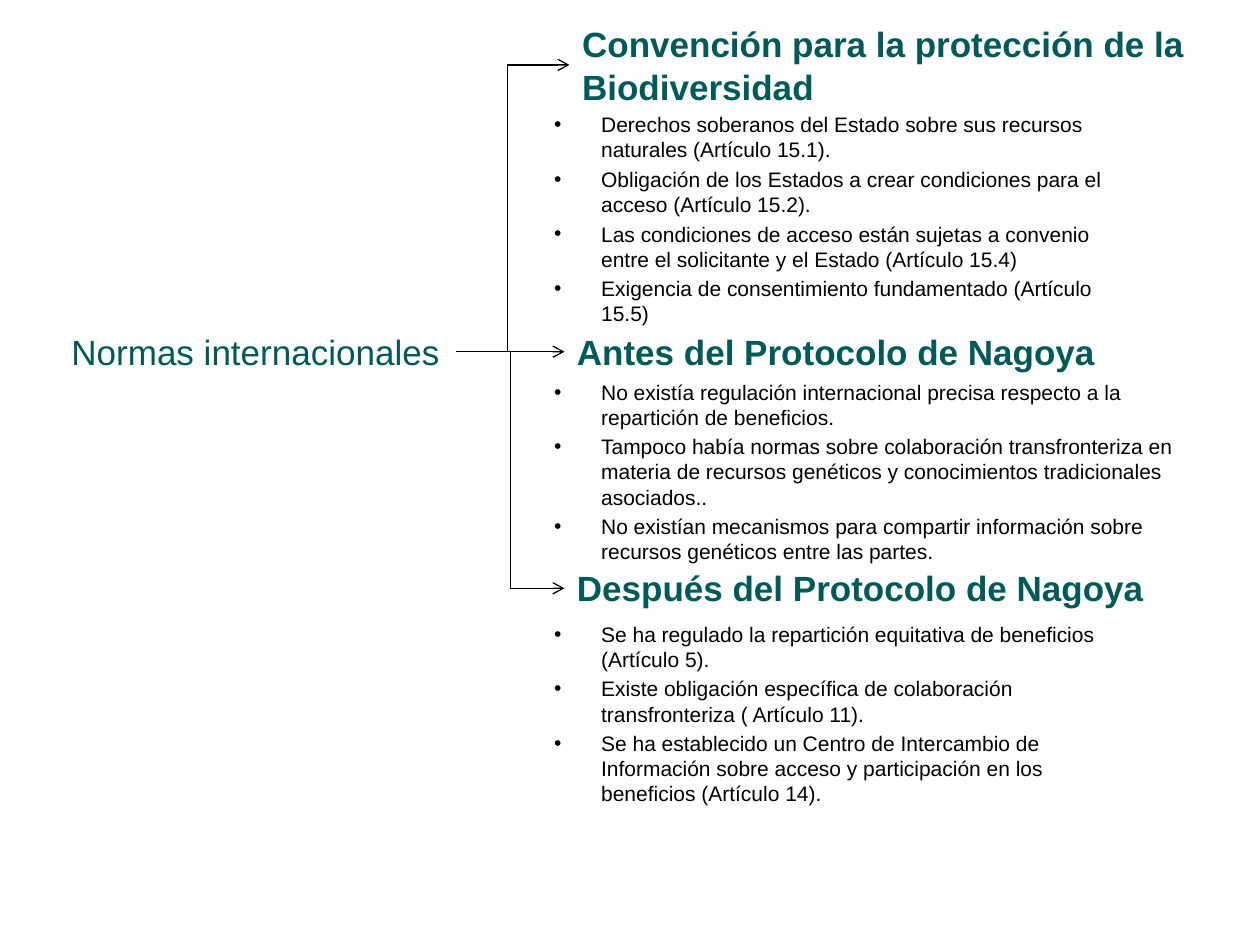
from lxml.etree import SubElement
from pptx import Presentation
from pptx.dml.color import RGBColor
from pptx.enum.shapes import MSO_CONNECTOR
from pptx.enum.text import MSO_ANCHOR, MSO_AUTO_SIZE, PP_ALIGN
from pptx.oxml.ns import qn
from pptx.util import Cm, Pt

GREEN, BLACK = "005A58", "000000"

# Content: boxes are left, top, width, height in centimetres
ROOT = ("Normas internacionales", (1.19, 6.53, 8.0, 1.12))
BRANCHES = [
    {
        "heading": "Convención para la protección de la Biodiversidad",
        "heading_box": (11.48, 0.33, 13.06, 1.96),
        "list_box": (10.92, 2.13, 12.29, 2.31),
        "bend": 0.457,
        "items": [
            "Derechos soberanos del Estado sobre sus recursos naturales (Artículo 15.1).",
            "Obligación de los Estados a crear condiciones para el acceso (Artículo 15.2).",
            "Las condiciones de acceso están sujetas a convenio entre el solicitante y el Estado (Artículo 15.4)",
            "Exigencia de consentimiento fundamentado (Artículo 15.5)",
        ],
    },
    {
        "heading": "Antes del Protocolo de Nagoya",
        "heading_box": (11.38, 6.53, 11.05, 1.12),
        "list_box": (10.92, 7.52, 13.49, 2.69),
        "items": [
            "No existía regulación internacional precisa respecto a la repartición de beneficios.",
            "Tampoco había normas sobre colaboración transfronteriza en materia de recursos "
            "genéticos y conocimientos tradicionales asociados..",
            "No existían mecanismos para compartir información sobre recursos genéticos entre las partes.",
        ],
    },
    {
        "heading": "Después del Protocolo de Nagoya",
        "heading_box": (11.38, 11.3, 12.04, 1.12),
        "list_box": (10.92, 12.4, 12.22, 2.69),
        "bend": 0.5,
        "items": [
            "Se ha regulado la repartición equitativa de beneficios (Artículo 5).",
            "Existe obligación específica de colaboración transfronteriza ( Artículo 11).",
            "Se ha establecido un Centro de Intercambio de Información sobre acceso y "
            "participación en los beneficios (Artículo 14).",
        ],
    },
]


def color(hex_value):
    return RGBColor.from_string(hex_value)


def lengths(values):
    return [Cm(value) for value in values]


def format_font(paragraph, size, hex_value, bold=False):
    paragraph.alignment = PP_ALIGN.LEFT
    font = paragraph.font
    font.name, font.size, font.bold = "Arial", Pt(size), bold
    font.color.rgb = color(hex_value)


def fill_heading(shape, text, bold=True, wrap=False, anchor=MSO_ANCHOR.TOP):
    frame = shape.text_frame
    frame.text = text
    frame.word_wrap = wrap
    frame.auto_size = MSO_AUTO_SIZE.SHAPE_TO_FIT_TEXT
    frame.vertical_anchor = anchor
    format_font(frame.paragraphs[0], 20, GREEN, bold)


def add_bullets(slide, box, items):
    frame = slide.shapes.add_textbox(*lengths(box)).text_frame
    frame.word_wrap = True
    for index, item in enumerate(items):
        paragraph = frame.add_paragraph() if index else frame.paragraphs[0]
        paragraph.text = item
        if index:
            paragraph.space_before = Pt(2.4)
        properties = paragraph._p.get_or_add_pPr()
        properties.set("marL", str(Cm(0.95)))
        properties.set("indent", str(-Cm(0.95)))
        SubElement(properties, qn("a:buFont"), typeface="Arial")
        SubElement(properties, qn("a:buChar"), char="•")
        format_font(paragraph, 12, BLACK)


def add_arrow(slide, start, end, bend=None):
    kind = MSO_CONNECTOR.ELBOW if bend else MSO_CONNECTOR.STRAIGHT
    connector = slide.shapes.add_connector(kind, *lengths(start + end))
    connector.line.color.rgb = color(BLACK)
    connector.line.width = Pt(0.75)
    SubElement(connector.line._get_or_add_ln(), qn("a:tailEnd"), type="arrow")
    properties = connector._element.spPr
    SubElement(properties, qn("a:effectLst"))
    if bend:
        adjustments = properties.find(qn("a:prstGeom")).get_or_add_avLst()
        SubElement(adjustments, qn("a:gd"), name="adj1", fmla=f"val {round(bend * 100000)}")


def main():
    presentation = Presentation()
    presentation.slide_width, presentation.slide_height = Cm(25.4), Cm(19.05)
    slide = presentation.slides.add_slide(presentation.slide_layouts[5])

    # Root label
    root_text, root_box = ROOT
    root = slide.shapes.add_textbox(*lengths(root_box))
    fill_heading(root, root_text, bold=False, anchor=MSO_ANCHOR.MIDDLE)
    left, top, width, height = root_box
    start = (left + width, top + height / 2)

    # Branches: heading, bullets and arrow; the first heading is the title
    for index, branch in enumerate(BRANCHES):
        box = branch["heading_box"]
        if index == 0:
            title = slide.shapes.title
            title.left, title.top, title.width, title.height = lengths(box)
            fill_heading(title, branch["heading"], wrap=True, anchor=MSO_ANCHOR.MIDDLE)
        else:
            fill_heading(slide.shapes.add_textbox(*lengths(box)), branch["heading"])
        add_bullets(slide, branch["list_box"], branch["items"])
        left, top, _, height = box
        add_arrow(slide, start, (left, top + height / 2), branch.get("bend"))

    presentation.save("out.pptx")


if __name__ == "__main__":
    main()
